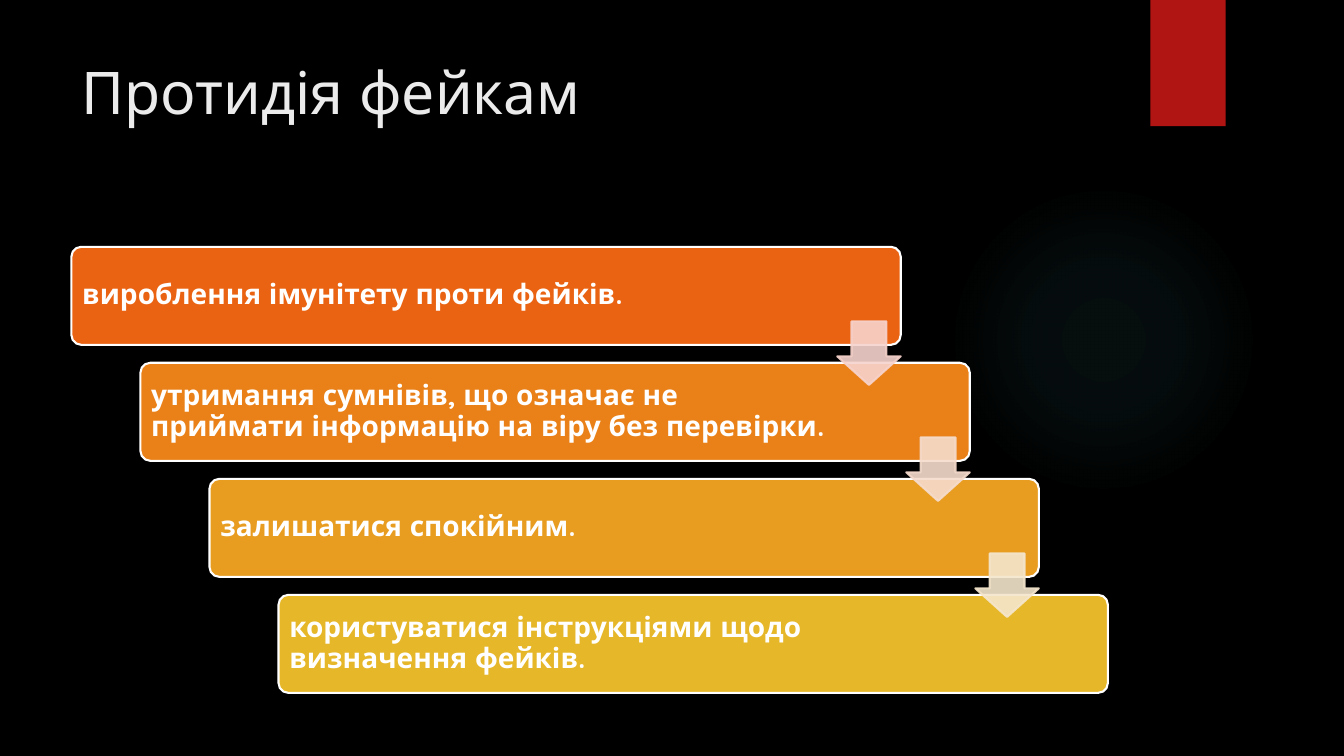
from dataclasses import dataclass

from pptx import Presentation
from pptx.dml.color import RGBColor
from pptx.enum.shapes import MSO_SHAPE
from pptx.enum.text import MSO_ANCHOR, PP_ALIGN
from pptx.oxml import parse_xml
from pptx.oxml.ns import nsdecls, qn
from pptx.util import Cm, Pt

ELLIPSE = MSO_SHAPE.OVAL
RECTANGLE = MSO_SHAPE.RECTANGLE
ROUNDED = MSO_SHAPE.ROUNDED_RECTANGLE
DOWN_ARROW = MSO_SHAPE.DOWN_ARROW
TOP, MIDDLE = MSO_ANCHOR.TOP, MSO_ANCHOR.MIDDLE
LEFT = PP_ALIGN.LEFT


@dataclass(frozen=True)
class Theme:
    font: str = "Quicksand"
    background: str = "000000"
    glow: str = "50B9C1"
    ribbon: str = "B01513"
    title: str = "EBEBEB"
    text: str = "FFFFFF"
    cards: tuple = ("EA6312", "EA8118", "E89D21", "E6B729")
    arrows: tuple = ("F7D3CC", "F6DCCD", "F5E6CD")
    arrow_opacity: int = 90
    title_size: int = 42
    card_size: int = 20
    outline: float = 1.5


THEME = Theme()

STEPS = (
    "вироблення імунітету проти фейків.",
    "утримання сумнівів, що означає не приймати інформацію на віру без перевірки.",
    "залишатися спокійним.",
    "користуватися інструкціями щодо визначення фейків.",
)


def add_filled_shape(slide, kind, box, color, line=None):
    shape = slide.shapes.add_shape(kind, *(Cm(length) for length in box))
    shape.shadow.inherit = False
    shape.fill.solid()
    shape.fill.fore_color.rgb = RGBColor.from_string(color)
    if line:
        shape.line.color.rgb = RGBColor.from_string(line)
        shape.line.width = Pt(THEME.outline)
    else:
        shape.line.fill.background()
    return shape


def write_text(shape, text, size, color, anchor, bold=False):
    frame = shape.text_frame
    frame.word_wrap = True
    frame.vertical_anchor = anchor
    frame.text = text
    paragraph = frame.paragraphs[0]
    paragraph.alignment = LEFT
    font = paragraph.runs[0].font
    font.name = THEME.font
    font.size = Pt(size)
    font.bold = bold
    font.color.rgb = RGBColor.from_string(color)


def set_opacity(shape, percent):
    """Make the fill and the outline of the shape partly transparent."""
    for color in shape._element.spPr.iter(qn("a:srgbClr")):
        color.append(parse_xml(f'<a:alpha {nsdecls("a")} val="{percent * 1000}"/>'))


def add_glow(slide, box):
    """Add a circle that fades out from its centre."""
    glow = add_filled_shape(slide, ELLIPSE, box, THEME.glow)
    stops = "".join(
        f'<a:gs pos="{position * 1000}"><a:srgbClr val="{THEME.glow}">'
        f'<a:alpha val="{opacity * 1000}"/></a:srgbClr></a:gs>'
        for position, opacity in ((0, 7), (36, 6), (69, 0))
    )
    gradient = parse_xml(
        f'<a:gradFill {nsdecls("a")}><a:gsLst>{stops}</a:gsLst><a:path path="circle">'
        '<a:fillToRect l="50000" t="50000" r="50000" b="50000"/></a:path></a:gradFill>'
    )
    properties = glow._element.spPr
    properties.replace(properties.find(qn("a:solidFill")), gradient)


def add_title(slide, box, text):
    title = slide.shapes.add_textbox(*(Cm(length) for length in box))
    write_text(title, text, THEME.title_size, THEME.title, TOP)


def add_card(slide, box, text, color):
    card = add_filled_shape(slide, ROUNDED, box, color, THEME.text)
    card.adjustments[0] = 0.1
    write_text(card, text, THEME.card_size, THEME.text, MIDDLE, bold=True)
    card.text_frame.paragraphs[0].line_spacing = 0.9
    card.text_frame.margin_left = Cm(0.2)
    card.text_frame.margin_right = Cm(3.55)


def add_arrow(slide, box, color):
    arrow = add_filled_shape(slide, DOWN_ARROW, box, color, color)
    arrow.adjustments[0] = 0.55
    arrow.adjustments[1] = 0.45
    set_opacity(arrow, THEME.arrow_opacity)


def add_staircase(slide, box):
    """Step the cards from the top left to the bottom right of the box."""
    left, top, width, height = box
    card_width, card_height, arrow_size, arrow_drop = 20.9, 2.47, 1.6, 1.88
    gaps = len(STEPS) - 1
    step_x = (width - card_width) / gaps
    step_y = (height - card_height) / gaps
    corners = [(left + i * step_x, top + i * step_y) for i in range(len(STEPS))]
    for (x, y), text, color in zip(corners, STEPS, THEME.cards):
        add_card(slide, (x, y, card_width, card_height), text, color)
    for (x, y), color in zip(corners, THEME.arrows):
        arrow_left = x + card_width - arrow_size
        add_arrow(slide, (arrow_left, y + arrow_drop, arrow_size, arrow_size), color)


def main():
    presentation = Presentation()
    presentation.slide_width = Cm(33.87)
    presentation.slide_height = Cm(19.05)
    slide = presentation.slides.add_slide(presentation.slide_layouts[6])
    slide.background.fill.solid()
    slide.background.fill.fore_color.rgb = RGBColor.from_string(THEME.background)
    add_glow(slide, (23.9, 4.65, 7.82, 7.82))
    add_filled_shape(slide, RECTANGLE, (28.99, 0, 1.9, 3.18), THEME.ribbon)
    add_title(slide, (1.8, 1.27, 26.14, 3.89), "Протидія фейкам")
    add_staircase(slide, (1.8, 6.22, 26.12, 11.24))
    presentation.save("out.pptx")


if __name__ == "__main__":
    main()
